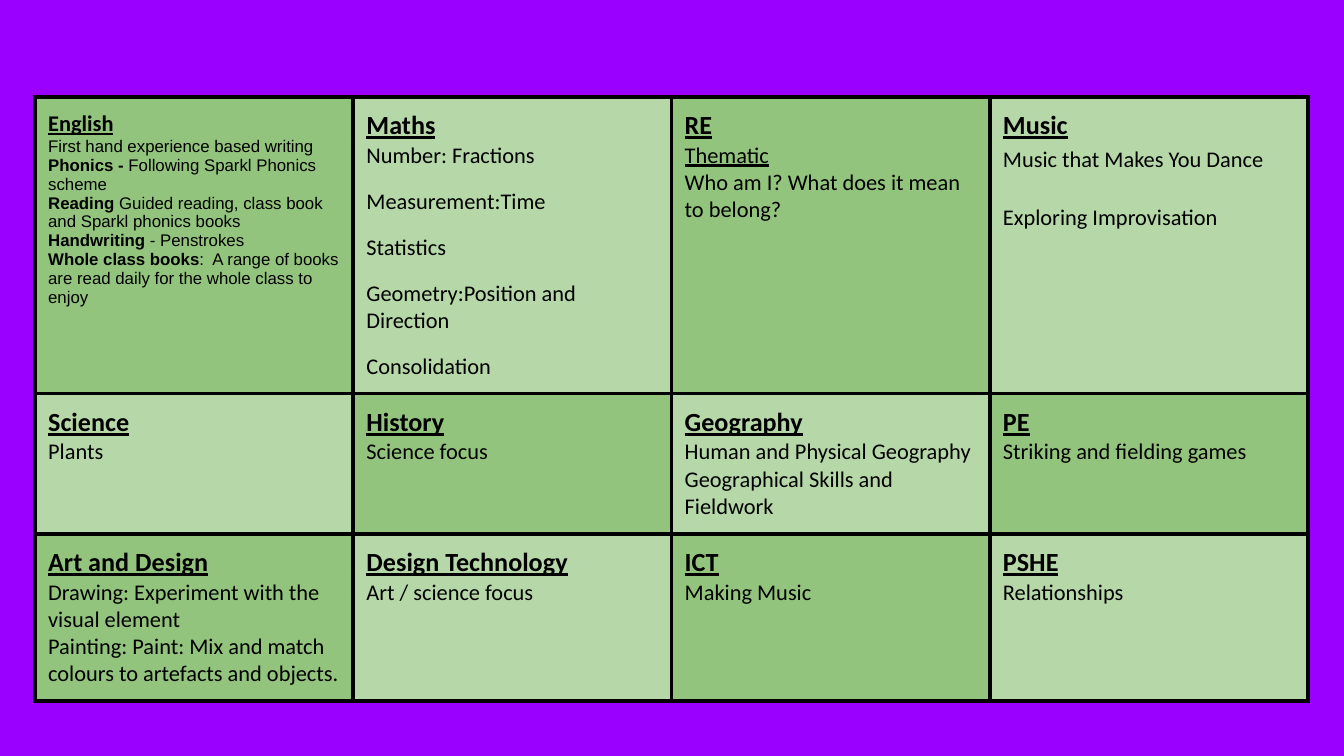
from lxml import etree
from pptx import Presentation
from pptx.dml.color import RGBColor
from pptx.oxml.ns import qn
from pptx.util import Cm, Pt

COLORS = {"background": "9900FF", "dark": "93C47D", "light": "B6D7A8", "ink": "000000"}
BORDER_WIDTH = Pt(2.25)
CELL_MARGIN = Cm(0.25)
ROW_HEIGHTS = [Cm(4.01), Cm(2.11), Cm(2.11)]

# Subject and its lines; text between ** marks is bold
SUBJECTS = [
    [
        ("English", [
            "First hand experience based writing **Phonics -** Following Sparkl Phonics scheme",
            "**Reading **Guided reading, class book and Sparkl phonics books",
            "**Handwriting** - Penstrokes",
            "**Whole class books**:  A range of books are read daily for the whole class to enjoy",
        ]),
        ("Maths", ["Number: Fractions", "Measurement:Time", "Statistics",
                   "Geometry:Position and Direction", "Consolidation"]),
        ("RE", ["Thematic", "Who am I? What does it mean to belong?"]),
        ("Music", ["Music that Makes You Dance", "Exploring Improvisation"]),
    ],
    [
        ("Science", ["Plants"]),
        ("History", ["Science focus"]),
        ("Geography", ["Human and Physical Geography", "Geographical Skills and Fieldwork"]),
        ("PE", ["Striking and fielding games"]),
    ],
    [
        ("Art and Design", ["Drawing: Experiment with the visual element",
                            "Painting: Paint: Mix and match colours to artefacts and objects."]),
        ("Design Technology", ["Art / science focus"]),
        ("ICT", ["Making Music"]),
        ("PSHE", ["Relationships"]),
    ],
]

# Subjects whose lines differ from the usual style
DEFAULT_STYLE = {"heading": 14, "size": 12, "font": "Calibri", "gap": 0, "spacing": 1.0}
SPECIAL_STYLES = {
    "English": {"heading": 12, "size": 9, "font": "Arial"},
    "Maths": {"gap": 10},
    "Music": {"gap": 14.65, "spacing": 1.15},
}
UNDERLINED_LINES = {"Thematic"}


def color(name):
    return RGBColor.from_string(COLORS[name])


def add_run(paragraph, text, size, font, bold=False, underline=False):
    run = paragraph.add_run()
    run.text = text
    run.font.size = Pt(size)
    run.font.name = font
    run.font.bold = bold
    run.font.underline = underline
    run.font.color.rgb = color("ink")


def set_borders(cell):
    properties = cell._tc.get_or_add_tcPr()
    for position, side in enumerate(("a:lnL", "a:lnR", "a:lnT", "a:lnB")):
        line = etree.Element(qn(side), w=str(BORDER_WIDTH))
        fill = etree.SubElement(line, qn("a:solidFill"))
        etree.SubElement(fill, qn("a:srgbClr"), val=COLORS["ink"])
        properties.insert(position, line)


def fill_cell(cell, subject, lines, shade):
    style = {**DEFAULT_STYLE, **SPECIAL_STYLES.get(subject, {})}
    cell.fill.solid()
    cell.fill.fore_color.rgb = color(shade)
    set_borders(cell)
    cell.margin_left = cell.margin_right = CELL_MARGIN
    cell.margin_top = cell.margin_bottom = CELL_MARGIN

    # Heading
    heading = cell.text_frame.paragraphs[0]
    add_run(heading, subject, style["heading"], "Calibri", bold=True, underline=True)

    # Topic lines
    for index, line in enumerate(lines):
        paragraph = cell.text_frame.add_paragraph()
        paragraph.line_spacing = style["spacing"]
        paragraph.space_before = Pt(style["gap"] if index else 0)
        for part, text in enumerate(line.split("**")):
            if text:
                add_run(paragraph, text, style["size"], style["font"],
                        bold=part % 2 == 1, underline=line in UNDERLINED_LINES)


def add_curriculum_table(slide, left, top, width):
    row_count, column_count = len(SUBJECTS), len(SUBJECTS[0])
    table = slide.shapes.add_table(row_count, column_count, left, top,
                                   width, sum(ROW_HEIGHTS)).table
    table.first_row = False
    table.horz_banding = False
    for column in table.columns:
        column.width = width // column_count
    for row_index, subjects in enumerate(SUBJECTS):
        table.rows[row_index].height = ROW_HEIGHTS[row_index]
        for column_index, (subject, lines) in enumerate(subjects):
            # Checkerboard of the two greens
            shade = "light" if (row_index + column_index) % 2 else "dark"
            fill_cell(table.cell(row_index, column_index), subject, lines, shade)


def main():
    presentation = Presentation()
    presentation.slide_width = Cm(25.4)
    presentation.slide_height = Cm(14.29)
    slide = presentation.slides.add_slide(presentation.slide_layouts[6])
    slide.background.fill.solid()
    slide.background.fill.fore_color.rgb = color("background")
    add_curriculum_table(slide, Cm(0.66), Cm(1.83), Cm(24.06))
    presentation.save("out.pptx")


if __name__ == "__main__":
    main()
